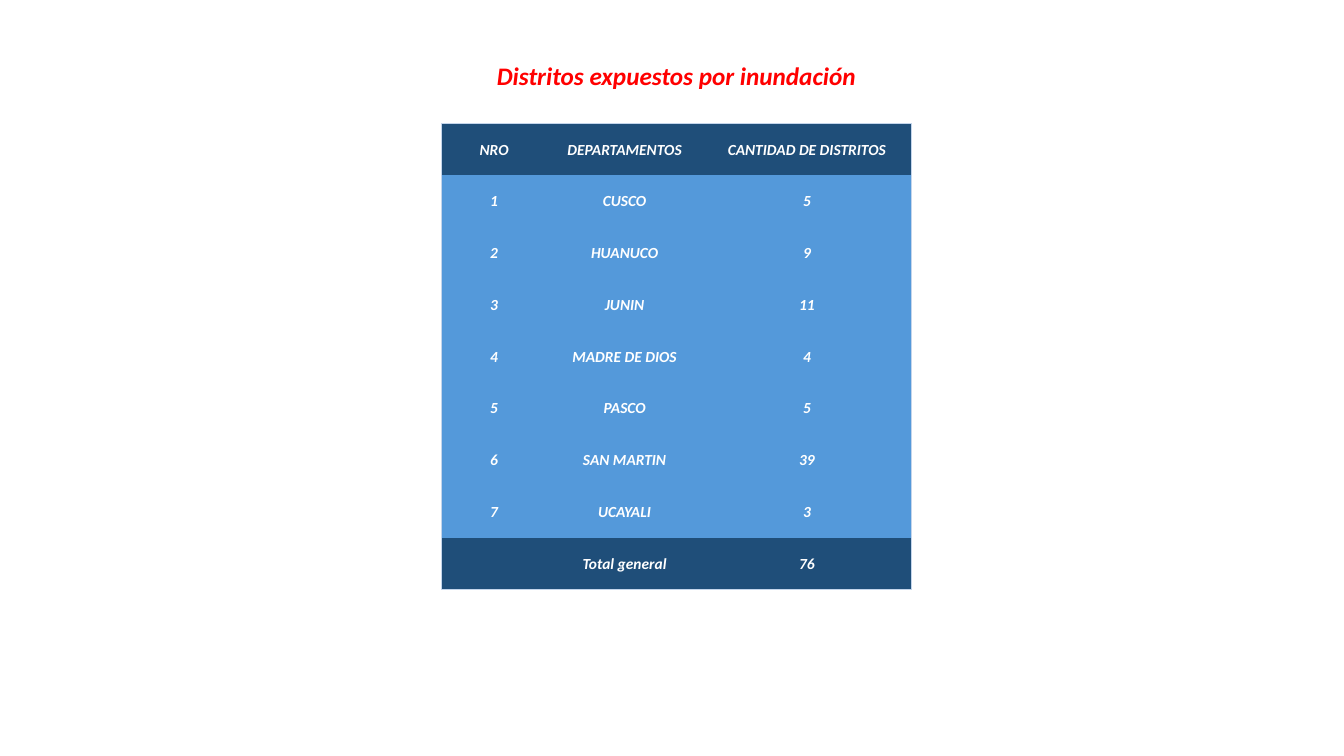
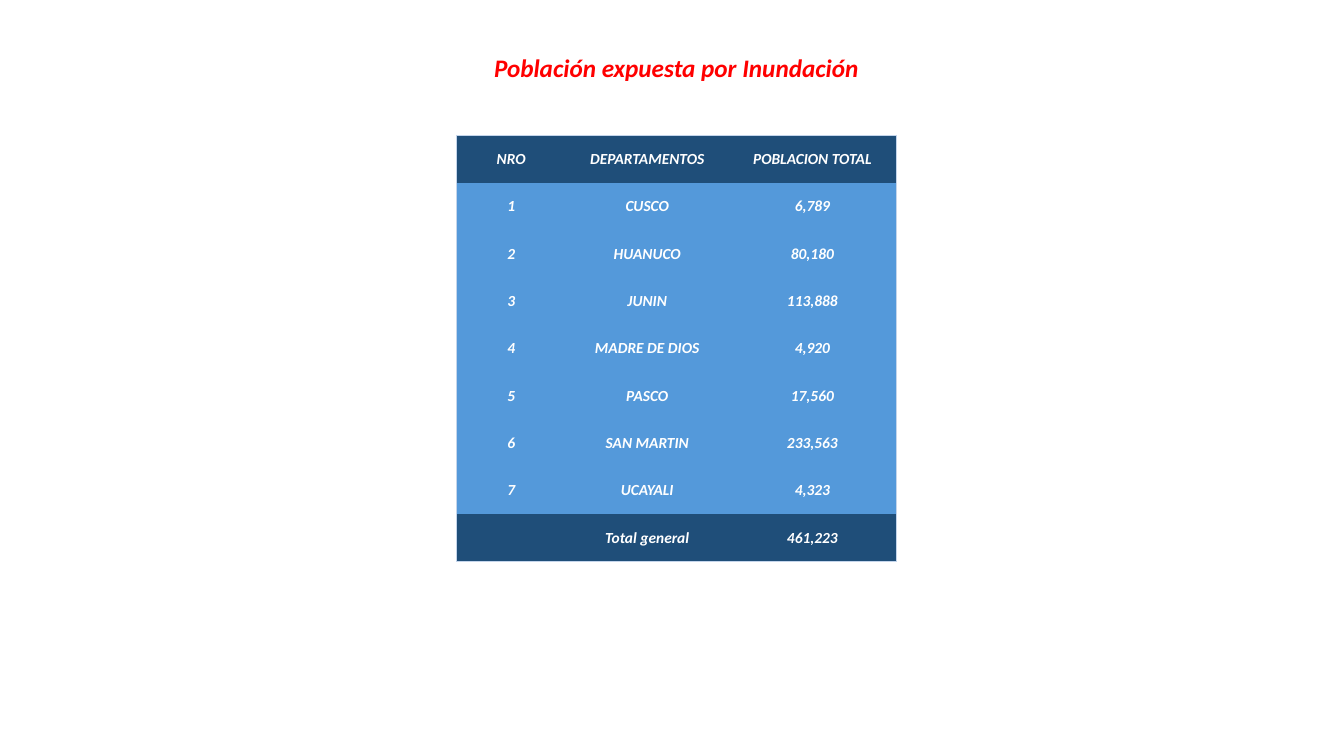
"""Build two slides with tables of districts and population exposed to flooding."""
from dataclasses import dataclass

from lxml import etree
from pptx import Presentation
from pptx.dml.color import RGBColor
from pptx.enum import text
from pptx.oxml import ns
from pptx.util import Pt


@dataclass(frozen=True)
class Theme:
    font: str = "Calibri"
    title: str = "FF0000"
    band: str = "1F4E79"
    body: str = "5499DA"
    cell_text: str = "FFFFFF"
    border: str = "C4D5EB"
    title_size: float = 18
    cell_size: float = 11
    border_width: float = 0.5
    margin: float = 0.72
    center: float = 483.2
    table_style: str = "{2D5ABB26-0587-4C30-8999-92F81FD0307C}"


class Deck:
    def __init__(self, theme):
        self.theme = theme
        self.prs = Presentation()
        self.prs.slide_width, self.prs.slide_height = Pt(960), Pt(540)
        self.s = None

    def slide(self):
        self.s = self.prs.slides.add_slide(self.prs.slide_layouts[6])

    def label(self, tf, content, size, color):
        p = tf.paragraphs[0]
        p.alignment = text.PP_ALIGN.CENTER
        f = p.font
        f.name, f.size = self.theme.font, Pt(size)
        f.bold = f.italic = True
        f.color.rgb = RGBColor.from_string(color)
        if content:
            p.add_run().text = content

    def title(self, content, top, width=280):
        t = self.theme
        sp = self.s.shapes.add_textbox(
            Pt(t.center - width / 2), Pt(top), Pt(width), Pt(29))
        tf = sp.text_frame
        tf.word_wrap = False
        tf.auto_size = text.MSO_AUTO_SIZE.SHAPE_TO_FIT_TEXT
        self.label(tf, content, t.title_size, t.title)

    def border(self, cell, side):
        tc_pr = cell._tc.get_or_add_tcPr()
        ln = etree.SubElement(tc_pr, ns.qn(f"a:ln{side}"),
                              w=str(Pt(self.theme.border_width)))
        fill = etree.SubElement(ln, ns.qn("a:solidFill"))
        etree.SubElement(fill, ns.qn("a:srgbClr"), val=self.theme.border)

    def cell(self, cell, content, sides, color):
        t = self.theme
        cell.margin_left = cell.margin_right = cell.margin_top = Pt(t.margin)
        cell.margin_bottom = Pt(0)
        cell.vertical_anchor = text.MSO_ANCHOR.MIDDLE
        for side in sides:
            self.border(cell, side)
        cell.fill.solid()
        cell.fill.fore_color.rgb = RGBColor.from_string(color)
        self.label(cell.text_frame, content, t.cell_size, t.cell_text)

    def table(self, rows, top, widths, row_height):
        t = self.theme
        last_row, last_col = len(rows) - 1, len(widths) - 1
        width = sum(widths)
        frame = self.s.shapes.add_table(
            len(rows), len(widths), Pt(t.center - width / 2), Pt(top),
            Pt(width), Pt(row_height * len(rows)))
        table = frame.table
        table.horz_banding = table.first_row = False
        next(table._tbl.iter(ns.qn("a:tableStyleId"))).text = t.table_style
        for column, w in zip(table.columns, widths):
            column.width = Pt(w)
        for i, values in enumerate(rows):
            table.rows[i].height = Pt(row_height)
            color = t.band if i in (0, last_row) else t.body
            for j, value in enumerate(values):
                edges = {"L": j == 0, "R": j == last_col,
                         "T": i == 0, "B": i == last_row}
                sides = [side for side, outer in edges.items() if outer]
                self.cell(table.cell(i, j), value, sides, color)


DEPARTMENTS = ("CUSCO", "HUANUCO", "JUNIN", "MADRE DE DIOS",
               "PASCO", "SAN MARTIN", "UCAYALI")


def department_rows(heading, counts):
    rows = [("NRO", "DEPARTAMENTOS", heading)]
    for number, (name, count) in enumerate(zip(DEPARTMENTS, counts), 1):
        rows.append((str(number), name, f"{count:,}"))
    return rows + [("", "Total general", f"{sum(counts):,}")]


def main():
    deck = Deck(Theme())

    deck.slide()
    deck.title("Distritos expuestos por inundación", top=39.8)
    deck.table(
        department_rows("CANTIDAD DE DISTRITOS", (5, 9, 11, 4, 5, 39, 3)),
        top=88.1, widths=(75, 111.5, 149), row_height=37)

    deck.slide()
    deck.title("Población expuesta por Inundación", top=34)
    deck.table(
        department_rows("POBLACION TOTAL",
                        (6789, 80180, 113888, 4920, 17560, 233563, 4323)),
        top=96.6, widths=(78.3, 116, 120), row_height=33.8)

    deck.prs.save("out.pptx")


if __name__ == "__main__":
    main()
